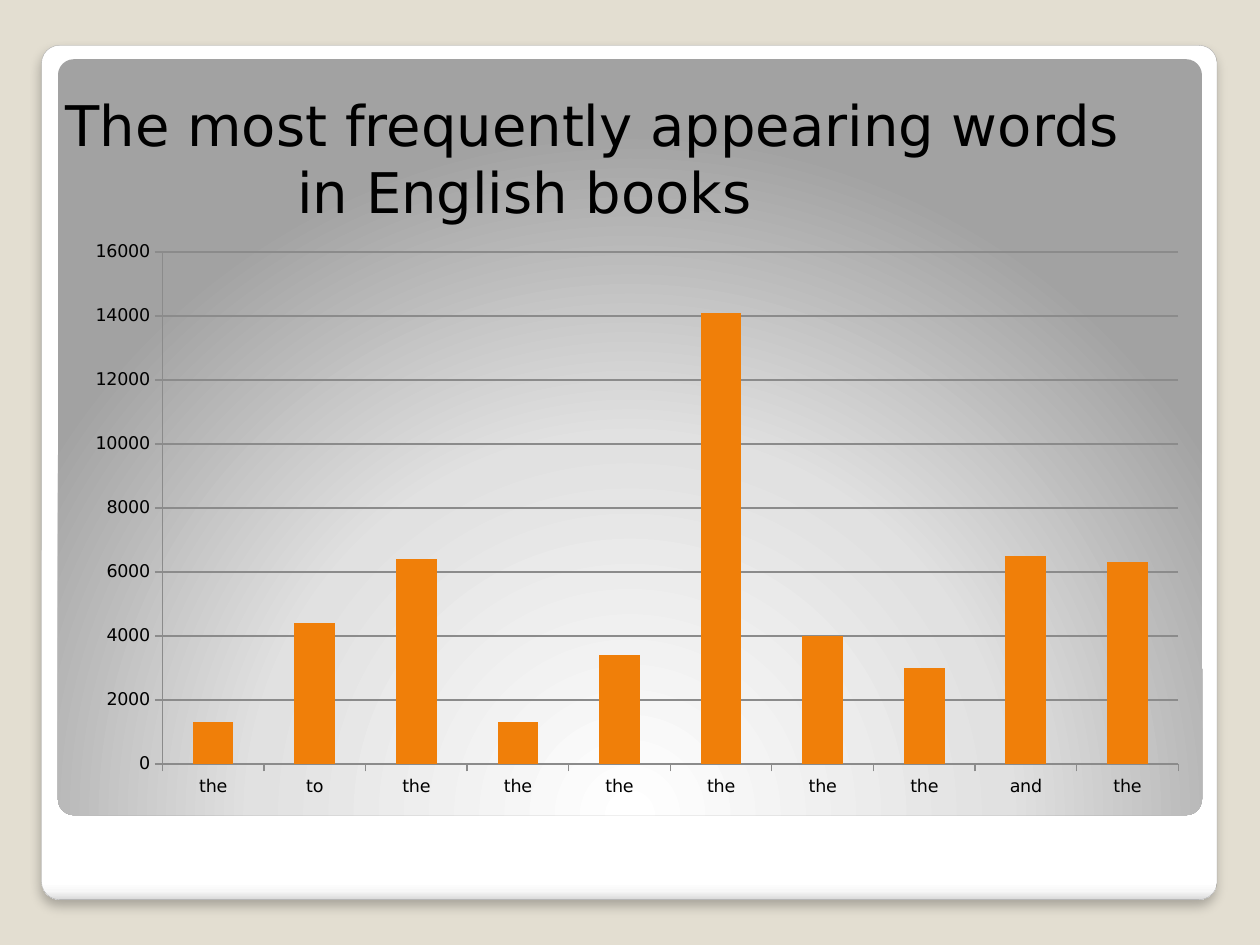
from lxml.etree import fromstring
from pptx import Presentation
from pptx.chart.data import CategoryChartData as Data
from pptx.dml.color import RGBColor as RGB
from pptx.enum.chart import XL_CHART_TYPE as Kind, XL_TICK_MARK as Tick
from pptx.enum.shapes import MSO_SHAPE as Shape
from pptx.enum.text import MSO_ANCHOR as Anchor, MSO_AUTO_SIZE as Fit, PP_ALIGN as Align
from pptx.oxml.ns import nsdecls
from pptx.util import Inches, Pt

FONT = "DejaVu Sans"
HUES = {"back": "E3DED1", "text": "000000", "bar": "F07F09",
        "edge": "A4A4A4", "grid": "8B8B8B"}
# text and left indent in inches
TITLE = [("The most frequently appearing words", 0),
         ("in English books", 1.84)]
WORDS = [("the", 1300), ("to", 4400), ("the", 6400), ("the", 1300),
         ("the", 3400), ("the", 14100), ("the", 4000), ("the", 3000),
         ("and", 6500), ("the", 6300)]
FRAME = [(0, "FFFFFF"), (98, "FFFFFF"), (99, "F7F7F7"), (100, "DADADA")]
GLOW = [(0, "FFFFFF"), (55, "E1E1E1"), (100, "A2A2A2")]
DOWN = '<a:lin ang="5400000" scaled="0"/>'
ROUND = ('<a:path path="circle"><a:fillToRect l="50000" t="175000" '
         'r="50000" b="-75000"/></a:path>')
SHADE = (f'<a:effectLst {nsdecls("a")}><a:outerShdw blurRad="{Pt(6)}" '
         f'dist="{Pt(4)}" dir="5400000" algn="t" rotWithShape="0">'
         '<a:srgbClr val="000000"><a:alpha val="25000"/></a:srgbClr>'
         '</a:outerShdw></a:effectLst>')


def hue(name):
    return RGB.from_string(HUES[name])


def box(*sides):
    return [Inches(side) for side in sides]


def panel(slide, place, stops, path):
    """Add a rounded panel filled with a gradient."""
    shape = slide.shapes.add_shape(Shape.ROUNDED_RECTANGLE, *box(*place))
    shape.adjustments[0] = 0.021
    shape.shadow.inherit = False
    shape.line.fill.background()
    marks = "".join(f'<a:gs pos="{at * 1000}"><a:srgbClr val="{tone}"/></a:gs>'
                    for at, tone in stops)
    grad = fromstring(f'<a:gradFill {nsdecls("a")} rotWithShape="1">'
                      f'<a:gsLst>{marks}</a:gsLst>{path}</a:gradFill>')
    shape._element.spPr.find("{*}prstGeom").addnext(grad)
    return shape


def add_bars(slide):
    data = Data()
    data.categories = [word for word, _ in WORDS]
    data.add_series("Series 1", [count for _, count in WORDS])
    chart = slide.shapes.add_chart(
        Kind.COLUMN_CLUSTERED, *box(0.58, 1.83, 8.95, 4.58), data).chart
    chart.has_legend = chart.has_title = False
    chart.font.name, chart.font.size = FONT, Pt(10)
    chart.font.color.rgb = hue("text")
    plot = chart.plots[0]
    plot.gap_width, plot.vary_by_categories = 150, False
    fill = plot.series[0].format.fill
    fill.solid()
    fill.fore_color.rgb = hue("bar")
    rows, cols = chart.value_axis, chart.category_axis
    rows.has_major_gridlines = True
    rows.minimum_scale, rows.maximum_scale, rows.major_unit = 0, 16000, 2000
    for axis in (rows, cols):
        axis.major_tick_mark = Tick.OUTSIDE
    for part in (rows, cols, rows.major_gridlines):
        part.format.line.color.rgb = hue("grid")
        part.format.line.width = Pt(0.75)


def add_title(slide):
    title = slide.shapes.title
    title.left, title.top, title.width, title.height = box(0.42, 0.67, 10.37, 1.18)
    frame = title.text_frame
    frame.word_wrap, frame.auto_size = True, Fit.SHAPE_TO_FIT_TEXT
    frame.vertical_anchor = Anchor.TOP
    for row, (text, indent) in enumerate(TITLE):
        para = frame.add_paragraph() if row else frame.paragraphs[0]
        para.alignment = Align.LEFT
        para._p.get_or_add_pPr().set("marL", str(Inches(indent)))
        run = para.add_run()
        run.text = text
        run.font.name, run.font.size = FONT, Pt(32)
        run.font.color.rgb = hue("text")
    slide.shapes._spTree.append(title._element)  # bring to front


def main():
    deck = Presentation()
    deck.slide_width, deck.slide_height = box(10, 7.5)
    slide = deck.slides.add_slide(deck.slide_layouts[5])
    back = slide.background.fill
    back.solid()
    back.fore_color.rgb = hue("back")
    frame = panel(slide, (0.33, 0.36, 9.33, 6.78), FRAME, DOWN)
    frame.line.color.rgb = hue("edge")
    frame.line.width = Pt(0.16)
    props = frame._element.spPr
    props.replace(props.find("{*}effectLst"), fromstring(SHADE))
    panel(slide, (0.46, 0.47, 9.08, 6), GLOW, ROUND)
    add_bars(slide)
    add_title(slide)
    deck.save("out.pptx")


if __name__ == "__main__":
    main()
